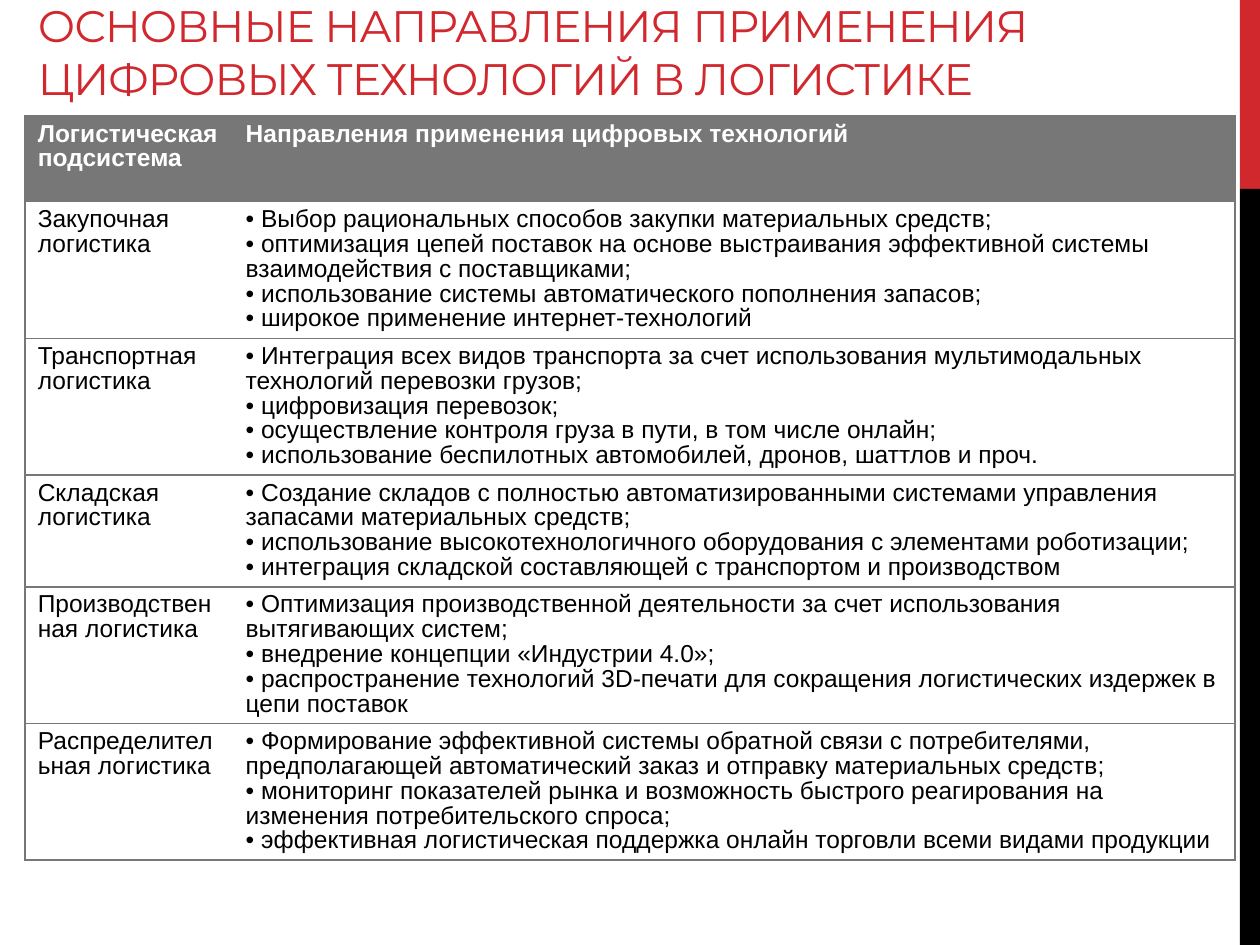
from lxml.etree import SubElement
from pptx import Presentation
from pptx.dml.color import RGBColor
from pptx.enum.shapes import MSO_SHAPE
from pptx.enum.text import MSO_ANCHOR, MSO_AUTO_SIZE, PP_ALIGN
from pptx.oxml.ns import qn
from pptx.util import Inches, Pt

WIDTH, HEIGHT = 10, 7.5
RED, BLACK, GREY, WHITE = "D1282E", "000000", "777777", "FFFFFF"
TITLE = "ОСНОВНЫЕ НАПРАВЛЕНИЯ ПРИМЕНЕНИЯ ЦИФРОВЫХ ТЕХНОЛОГИЙ В ЛОГИСТИКЕ"
HEADER = ("Логистическая подсистема", "Направления применения цифровых технологий")
SUBSYSTEMS = [
    ("Закупочная логистика", [
        "Выбор рациональных способов закупки материальных средств;",
        "оптимизация цепей поставок на основе выстраивания эффективной системы взаимодействия с поставщиками;",
        "использование системы автоматического пополнения запасов;",
        "широкое применение интернет-технологий"]),
    ("Транспортная логистика", [
        "Интеграция всех видов транспорта за счет использования мультимодальных технологий перевозки грузов;",
        "цифровизация перевозок;",
        "осуществление контроля груза в пути, в том числе онлайн;",
        "использование беспилотных автомобилей, дронов, шаттлов и проч."]),
    ("Складская логистика", [
        "Создание складов с полностью автоматизированными системами управления запасами материальных средств;",
        "использование высокотехнологичного оборудования с элементами роботизации;",
        "интеграция складской составляющей с транспортом и производством"]),
    ("Производственная логистика", [
        "Оптимизация производственной деятельности за счет использования вытягивающих систем;",
        "внедрение концепции «Индустрии 4.0»;",
        "распространение технологий 3D-печати для сокращения логистических издержек в цепи поставок"]),
    ("Распределительная логистика", [
        "Формирование эффективной системы обратной связи с потребителями, предполагающей автоматический заказ и отправку материальных средств;",
        "мониторинг показателей рынка и возможность быстрого реагирования на изменения потребительского спроса;",
        "эффективная логистическая поддержка онлайн торговли всеми видами продукции"]),
]
TABLE_LEFT, TABLE_TOP = 0.2, 0.92
COLUMNS = (1.65, 7.95)
HEADER_HEIGHT, ROW_HEIGHT = 0.68, 0.41  # body rows grow with their text
BAND_WIDTH = 0.16
BANDS = [(RED, 0, 0.2), (BLACK, 0.2, 0.8)]  # colour, top and height as shares of the slide
TITLE_FONT = {"name": "Montserrat", "size": Pt(25.2), "bold": False}
HEADER_FONT = {"name": "Arial", "size": Pt(14), "bold": True}
BODY_FONT = {**HEADER_FONT, "bold": False}


def colour(value):
    return RGBColor.from_string(value)


def set_font(font, formats, value):
    for name, setting in formats.items():
        setattr(font, name, setting)
    font.color.rgb = colour(value)


def draw_borders(cell, sides):
    """Line the given sides (L, R, T, B) and clear the others."""
    properties = cell._tc.get_or_add_tcPr()
    for position, side in enumerate("LRTB"):
        line = properties.makeelement(qn(f"a:ln{side}"), {"w": str(Pt(1))})
        properties.insert(position, line)
        if side in sides:
            fill = SubElement(line, qn("a:solidFill"))
            SubElement(fill, qn("a:srgbClr"), val=GREY)
        else:
            SubElement(line, qn("a:noFill"))


def fill_cell(cell, lines, formats, text_colour, background):
    cell.fill.solid()
    cell.fill.fore_color.rgb = colour(background)
    cell.text = "\n".join(lines)
    for para in cell.text_frame.paragraphs:
        para.line_spacing = 0.9
        set_font(para.runs[0].font, formats, text_colour)


def add_bands(page):
    for value, top, height in BANDS:
        band = page.shapes.add_shape(
            MSO_SHAPE.RECTANGLE, Inches(WIDTH - BAND_WIDTH), Inches(top * HEIGHT),
            Inches(BAND_WIDTH), Inches(height * HEIGHT))
        band.shadow.inherit = False
        band.fill.solid()
        band.fill.fore_color.rgb = colour(value)
        band.line.fill.background()


def format_title(title):
    title.left, title.top, title.width, title.height = map(Inches, (0.2, 0.13, 9.37, 0.75))
    frame = title.text_frame
    frame.text = TITLE
    frame.word_wrap = True
    frame.auto_size = MSO_AUTO_SIZE.NONE
    frame.vertical_anchor = MSO_ANCHOR.BOTTOM
    para = frame.paragraphs[0]
    para.alignment = PP_ALIGN.LEFT
    span = para.runs[0]
    set_font(span.font, TITLE_FONT, RED)
    span.font._element.set("spc", "-60")


def add_directions_table(page):
    row_count = len(SUBSYSTEMS) + 1
    table = page.shapes.add_table(
        row_count, len(COLUMNS), Inches(TABLE_LEFT), Inches(TABLE_TOP), Inches(sum(COLUMNS)),
        Inches(HEADER_HEIGHT + ROW_HEIGHT * len(SUBSYSTEMS))).table
    for column, width in zip(table.columns, COLUMNS):
        column.width = Inches(width)
    for index, row in enumerate(table.rows):
        row.height = Inches(ROW_HEIGHT if index else HEADER_HEIGHT)
        if index:
            name, directions = SUBSYSTEMS[index - 1]
            contents = [name], [f"• {direction}" for direction in directions]
            style = BODY_FONT, BLACK, WHITE
        else:
            contents = [[heading] for heading in HEADER]
            style = HEADER_FONT, WHITE, GREY
        for cell, lines, outer_side in zip(row.cells, contents, "LR"):
            fill_cell(cell, lines, *style)
            draw_borders(cell, outer_side + "TB")


def main():
    deck = Presentation()
    deck.slide_width, deck.slide_height = Inches(WIDTH), Inches(HEIGHT)
    page = deck.slides.add_slide(deck.slide_layouts[5])
    add_bands(page)
    format_title(page.shapes.title)
    add_directions_table(page)
    deck.save("out.pptx")


if __name__ == "__main__":
    main()
